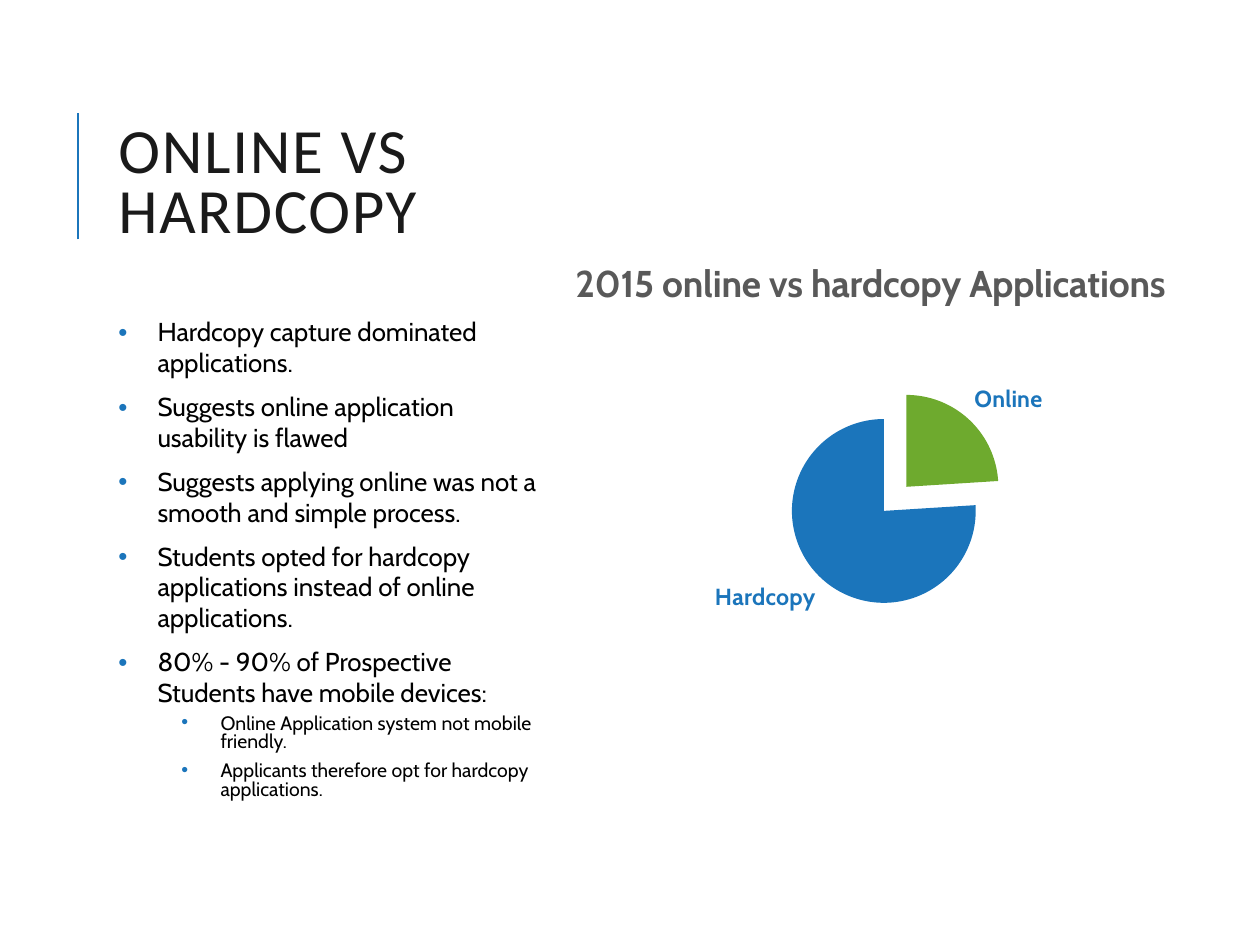
import pptx
import pptx.chart.data
import pptx.dml.color
import pptx.enum.chart
import pptx.enum.shapes
import pptx.enum.text
import pptx.oxml
import pptx.oxml.ns
import pptx.util
from pptx.util import Inches

BLUE = pptx.dml.color.RGBColor(0x1B, 0x75, 0xBB)
GREEN = pptx.dml.color.RGBColor(0x6E, 0xAA, 0x2E)
BLACK = pptx.dml.color.RGBColor(0, 0, 0)
INK = pptx.dml.color.RGBColor(0x1A, 0x1A, 0x1A)
GREY = pptx.dml.color.RGBColor(0x59, 0x59, 0x59)

POINTS = [
    (0, "Hardcopy capture dominated applications."),
    (0, "Suggests online application usability is flawed"),
    (0, "Suggests applying online was not a smooth and simple process."),
    (0, "Students opted for hardcopy applications instead of online applications."),
    (0, "80% - 90% of Prospective Students have mobile devices:"),
    (1, "Online Application system not mobile friendly."),
    (1, "Applicants therefore opt for hardcopy applications."),
]
# Text size, line spacing, space before, space after and indent of each level
LEVELS = [(14.8, 0.98, 6, 2, 0.31), (11.1, 0.8, 2, 4, 0.81)]
CATEGORIES = ["Online", "Hardcopy"]
# Values and slice colours of each series; the pie shows the first
SERIES = {
    "Series 1": ((24, 76), (GREEN, BLUE)),
    "Series 2": ((100, None), (BLUE, BLUE)),
    "Series 3": ((100, None), (BLUE, BLUE)),
}


def set_font(font, name="Cabin", size=10, color=BLACK, bold=False):
    font.name, font.size, font.bold = name, pptx.util.Pt(size), bold
    font.color.rgb = color


def add_text(para, text, spacing=None, **style):
    span = para.add_run()
    span.text = text
    set_font(span.font, **style)
    if spacing:
        span._r.get_or_add_rPr().set("spc", str(spacing * 100))


def place(shape, box):
    shape.left, shape.top, shape.width, shape.height = map(Inches, box)


def add_bullet(para, indent):
    props = para._p.get_or_add_pPr()
    props.set("marL", str(Inches(indent)))
    props.set("indent", str(Inches(-0.31)))
    namespace = pptx.oxml.ns.nsdecls("a")
    for xml in (
        f'<a:buClr {namespace}><a:srgbClr val="{BLUE}"/></a:buClr>',
        f'<a:buFont {namespace} typeface="Arial"/>',
        f'<a:buChar {namespace} char="•"/>',
    ):
        props.append(pptx.oxml.parse_xml(xml))


def set_layout(element, index, target="", **fractions):
    for old in element.findall(pptx.oxml.ns.qn("c:layout")):
        element.remove(old)
    modes = "".join(f'<c:{key}Mode val="edge"/>' for key in "xy")
    values = "".join(f'<c:{key} val="{value}"/>' for key, value in fractions.items())
    element.insert(index, pptx.oxml.parse_xml(
        f'<c:layout {pptx.oxml.ns.nsdecls("c")}><c:manualLayout>'
        f"{target}{modes}{values}</c:manualLayout></c:layout>"))


def explosion(percent):
    return pptx.oxml.parse_xml(
        f'<c:explosion {pptx.oxml.ns.nsdecls("c")} val="{percent}"/>')


def build_title(page, box):
    # Accent rule left of the heading
    left, top, width, height = box
    middle = top + height / 2
    rule = page.shapes.add_connector(
        pptx.enum.shapes.MSO_CONNECTOR.STRAIGHT, Inches(left - 0.22),
        Inches(middle + 0.43), Inches(left - 0.22), Inches(middle - 0.57))
    rule.line.color.rgb = BLUE
    rule.line.width = pptx.util.Pt(1.5)
    rule._element.spPr.append(pptx.oxml.parse_xml(
        f'<a:effectLst {pptx.oxml.ns.nsdecls("a")}/>'))

    # Heading
    title = page.shapes.title
    place(title, box)
    frame = title.text_frame
    frame.word_wrap = True
    frame.auto_size = pptx.enum.text.MSO_AUTO_SIZE.NONE
    frame.vertical_anchor = pptx.enum.text.MSO_ANCHOR.MIDDLE
    para = frame.paragraphs[0]
    para.alignment = pptx.enum.text.PP_ALIGN.LEFT
    para.line_spacing = 0.8
    add_text(para, "ONLINE VS HARDCOPY", name="Calibri", size=36, color=INK, spacing=1)


def build_list(page, box):
    body = page.placeholders[1]
    place(body, box)
    frame = body.text_frame
    frame.word_wrap = True
    frame.auto_size = pptx.enum.text.MSO_AUTO_SIZE.NONE
    for number, (level, text) in enumerate(POINTS):
        para = frame.add_paragraph() if number else frame.paragraphs[0]
        size, para.line_spacing, before, after, indent = LEVELS[level]
        para.level = level
        para.space_before = pptx.util.Pt(before)
        para.space_after = pptx.util.Pt(after)
        add_bullet(para, indent)
        add_text(para, text, size=size)


def format_series(series, colors):
    # Slices
    for number, color in enumerate(colors):
        fill = series.points[number].format.fill
        fill.solid()
        fill.fore_color.rgb = color

    # Category labels
    labels = series.data_labels
    labels.show_category_name = True
    labels.show_value = False
    labels.show_percentage = False
    labels.number_format = "0%"
    labels.number_format_is_linked = False
    labels.position = pptx.enum.chart.XL_LABEL_POSITION.OUTSIDE_END
    set_font(labels.font, size=13.3, color=BLUE, bold=True)


def build_chart(page, box):
    data = pptx.chart.data.CategoryChartData(number_format="General")
    data.categories = CATEGORIES
    for name, (values, colors) in SERIES.items():
        data.add_series(name, values)
    chart = page.shapes.add_chart(
        pptx.enum.chart.XL_CHART_TYPE.PIE, *map(Inches, box), data).chart
    # A new pie takes one series only; replacing its data adds the others
    chart.replace_data(data)
    set_font(chart.font)
    chart.has_legend = False

    # Chart title
    chart.has_title = True
    add_text(chart.chart_title.text_frame.paragraphs[0],
             "2015 online vs hardcopy Applications", size=21.3, color=GREY, bold=True)
    set_layout(chart.chart_title._element, 1, x=0.1, y=0.02)

    # Pie
    plot = chart.plots[0]
    plot.vary_by_categories = True
    for series, (values, colors) in zip(plot.series, SERIES.values()):
        format_series(series, colors)
    set_layout(chart._chartSpace.chart.plotArea, 0,
               target='<c:layoutTarget val="inner"/>', x=0.35, y=0.32, w=0.33, h=0.54)

    # Pull the first slice out and keep the second in place
    slices = plot.series[0]._element.findall(pptx.oxml.ns.qn("c:dPt"))
    slices[0].addprevious(explosion(34))
    for piece, percent in zip(slices, (36, 0)):
        piece.find(pptx.oxml.ns.qn("c:spPr")).addprevious(explosion(percent))


def main():
    deck = pptx.Presentation()
    deck.slide_width, deck.slide_height = Inches(10), Inches(7.5)
    page = deck.slides.add_slide(deck.slide_layouts[1])
    build_title(page, (0.84, 0.52, 3.68, 1.9))
    build_list(page, (0.84, 2.47, 3.6, 4.11))
    build_chart(page, (3.91, 1.92, 6.03, 3.62))
    deck.save("out.pptx")


if __name__ == "__main__":
    main()
